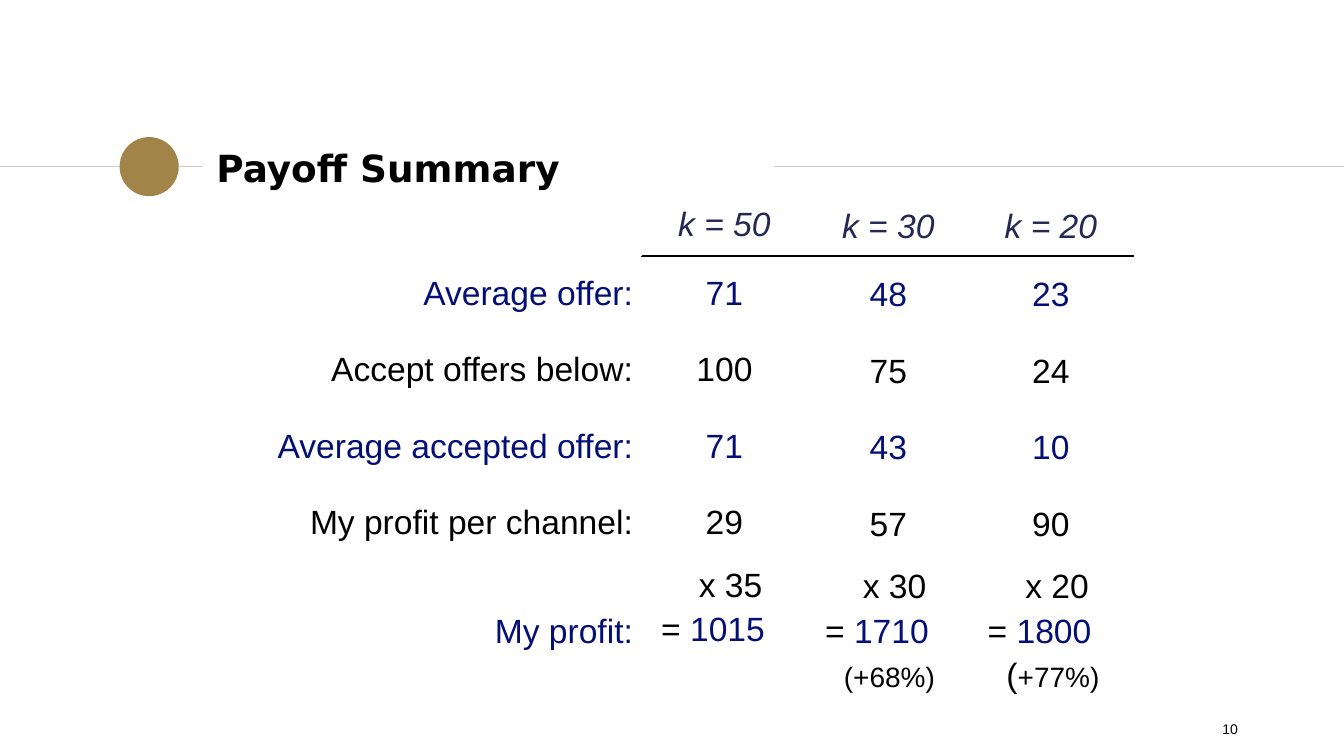
from lxml.etree import SubElement
from pptx import Presentation
from pptx.dml.color import RGBColor
from pptx.enum.shapes import MSO_CONNECTOR, MSO_SHAPE
from pptx.enum.text import MSO_ANCHOR, PP_ALIGN
from pptx.oxml import parse_xml
from pptx.oxml.ns import nsdecls, qn
from pptx.util import Inches, Pt

BLACK, NAVY, SLATE, GOLD, GREY = "000000", "040F76", "242852", "A28448", "CCCCCC"
PLAIN_TABLE = "{2D5ABB26-0587-4C30-8999-92F81FD0307C}"
COLUMN_WIDTHS = [2.88, 1.22, 1.22, 1.22]
ROW_HEIGHTS = [0.45, 0.57, 0.57, 0.57, 0.57]
ROW_COLOURS = [SLATE, NAVY, BLACK, NAVY, BLACK]
LABELS = ["Average offer:", "Accept offers below:", "Average accepted offer:",
          "My profit per channel:", "My profit:"]


def colour(hex_code):
    return RGBColor.from_string(hex_code)


def add_run(paragraph, text, size=18, hex_code=BLACK, font="Arial", bold=False, italic=False):
    run = paragraph.add_run()
    run.text = text
    run.font.name = font
    run.font.size = Pt(size)
    run.font.bold = bold
    run.font.italic = italic
    run.font.color.rgb = colour(hex_code)


def add_rule(slide, left, right, y):
    rule = slide.shapes.add_connector(
        MSO_CONNECTOR.STRAIGHT, Inches(left), Inches(y), Inches(right), Inches(y))
    rule.line.color.rgb = colour(GREY)
    rule.line.width = Pt(0.75)
    SubElement(rule._element.spPr, qn("a:effectLst"))


def add_heading(slide, left, top, width, height, text):
    """Place the title between two rules, with a dot to its left."""
    middle = top + 0.23
    add_rule(slide, 0, left, middle)
    add_rule(slide, left + width, 10, middle)
    dot = slide.shapes.add_shape(
        MSO_SHAPE.OVAL, Inches(left - 0.62), Inches(middle - 0.22), Inches(0.44), Inches(0.44))
    dot.shadow.inherit = False
    dot.fill.solid()
    dot.fill.fore_color.rgb = colour(GOLD)
    dot.line.fill.background()

    title = slide.shapes.title
    title.left, title.top = Inches(left), Inches(top)
    title.width, title.height = Inches(width), Inches(height)
    frame = title.text_frame
    frame.word_wrap = True
    frame.vertical_anchor = MSO_ANCHOR.MIDDLE
    frame.margin_left = frame.margin_right = Inches(0.1)
    frame.margin_top = frame.margin_bottom = Inches(0.1)
    paragraph = frame.paragraphs[0]
    paragraph.alignment = PP_ALIGN.LEFT
    add_run(paragraph, text, 20, font="DejaVu Sans", bold=True)


def add_bottom_border(cell):
    cell._tc.get_or_add_tcPr().insert(0, parse_xml(
        f'<a:lnB {nsdecls("a")} w="12700"><a:solidFill>'
        f'<a:srgbClr val="{BLACK}"/></a:solidFill></a:lnB>'))


def set_relative_space_before(paragraph):
    """Set the space before to 20 percent of the line."""
    spacing = SubElement(paragraph._p.get_or_add_pPr(), qn("a:spcBef"))
    SubElement(spacing, qn("a:spcPct")).set("val", "20000")


def write_cell(cell, text, alignment, hex_code, italic=False):
    cell.vertical_anchor = MSO_ANCHOR.MIDDLE
    paragraph = cell.text_frame.paragraphs[0]
    paragraph.alignment = alignment
    set_relative_space_before(paragraph)
    add_run(paragraph, text, hex_code=hex_code, italic=italic)


def write_profit(cell, channels, profit, gain):
    """Write the multiplication, its result and the gain, each with its indent."""
    lines = [(0.35, [(f"x {channels}", 18, BLACK)]),
             (0, [(" = ", 18, BLACK), (profit, 18, NAVY)])]
    if gain:
        lines.append((0.14, gain))
    frame = cell.text_frame
    for index, (indent, runs) in enumerate(lines):
        paragraph = frame.add_paragraph() if index else frame.paragraphs[0]
        set_relative_space_before(paragraph)
        paragraph._p.get_or_add_pPr().set("marL", str(Inches(indent)))
        for text, size, hex_code in runs:
            add_run(paragraph, text, size, hex_code)


def add_payoff_table(slide, left, top, last_height, column, values, profit, labels=()):
    """Add one layer of the payoff grid, which fills a single value column."""
    heights = ROW_HEIGHTS + [last_height]
    frame = slide.shapes.add_table(
        len(heights), len(COLUMN_WIDTHS), Inches(left), Inches(top),
        Inches(sum(COLUMN_WIDTHS)), Inches(sum(heights)))
    table = frame.table
    table.first_row = table.horz_banding = False
    table._tbl.tblPr.find(qn("a:tableStyleId")).text = PLAIN_TABLE
    for table_column, width in zip(table.columns, COLUMN_WIDTHS):
        table_column.width = Inches(width)
    for row, height in zip(table.rows, heights):
        row.height = Inches(height)
    for cell in table.iter_cells():
        cell.fill.background()
        cell.margin_left = cell.margin_right = Inches(0.07)
        cell.margin_top = cell.margin_bottom = Inches(0.04)
    for index in range(1, len(COLUMN_WIDTHS)):
        add_bottom_border(table.cell(0, index))

    for row, (value, hex_code) in enumerate(zip(values, ROW_COLOURS)):
        write_cell(table.cell(row, column), value, PP_ALIGN.CENTER, hex_code, italic=row == 0)
    write_profit(table.cell(len(values), column), *profit)
    for row, label in enumerate(labels, 1):
        write_cell(table.cell(row, 0), label, PP_ALIGN.RIGHT, NAVY if row % 2 else BLACK)


def add_page_number(slide, left, top, width, height, number):
    box = slide.shapes.add_textbox(Inches(left), Inches(top), Inches(width), Inches(height))
    frame = box.text_frame
    frame.word_wrap = True
    frame.vertical_anchor = MSO_ANCHOR.BOTTOM
    frame.margin_bottom = Inches(0.02)
    paragraph = frame.paragraphs[0]
    paragraph.alignment = PP_ALIGN.RIGHT
    add_run(paragraph, number, 7.5)


def main():
    presentation = Presentation()
    presentation.slide_width = Inches(10)
    presentation.slide_height = Inches(10) * 9 // 16
    slide = presentation.slides.add_slide(presentation.slide_layouts[5])
    add_heading(slide, 1.51, 1.01, 4.25, 0.48, "Payoff Summary")
    add_payoff_table(slide, 1.89, 1.46, 1.1, 3, ["k = 20", "23", "24", "10", "90"],
                     ("20", "1800", [(" (", 18, BLACK), ("+77%)", 15, BLACK)]))
    add_payoff_table(slide, 1.9, 1.45, 1.05, 1, ["k = 50", "71", "100", "71", "29"],
                     ("35", "1015", None), LABELS)
    add_payoff_table(slide, 1.9, 1.46, 1.1, 2, ["k = 30", "48", "75", "43", "57"],
                     ("30", "1710", [(" ", 18, BLACK), ("(+68%)", 15, BLACK)]))
    add_page_number(slide, 7.06, 5.21, 2.25, 0.3, "10")
    presentation.save("out.pptx")


if __name__ == "__main__":
    main()
